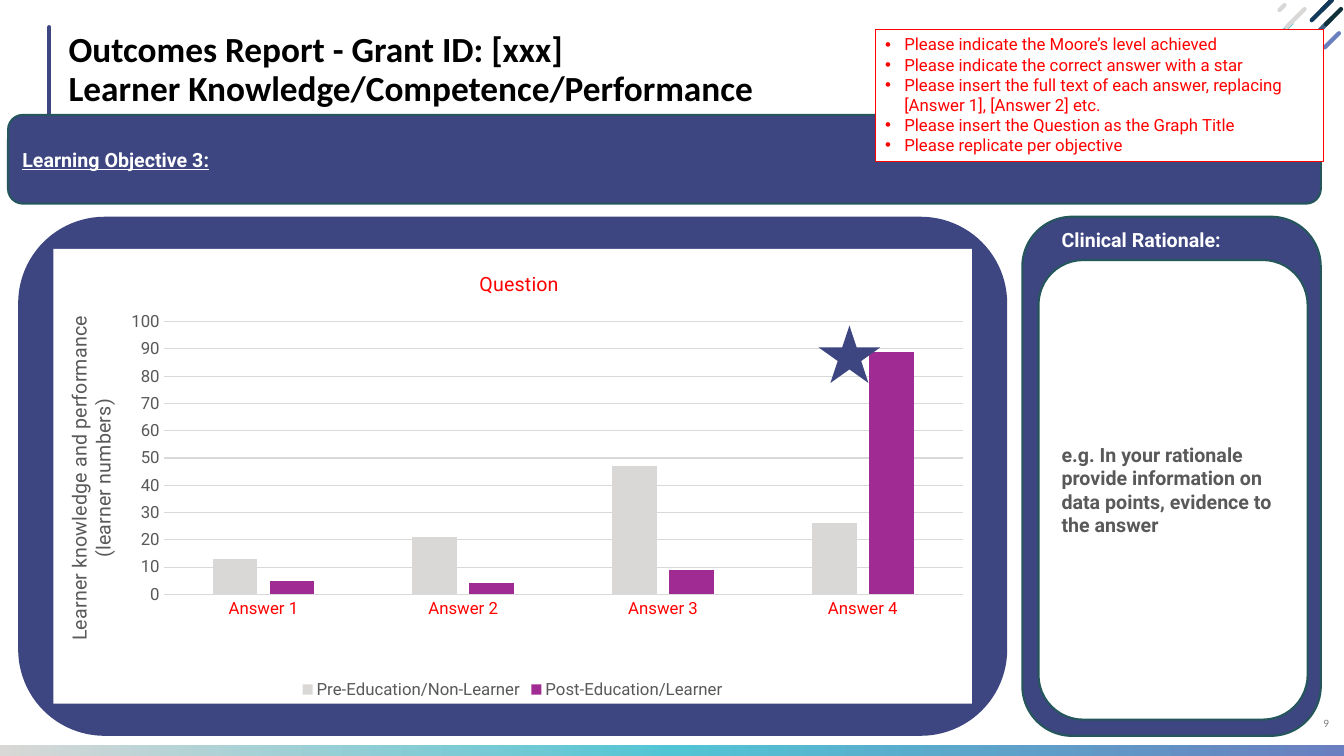
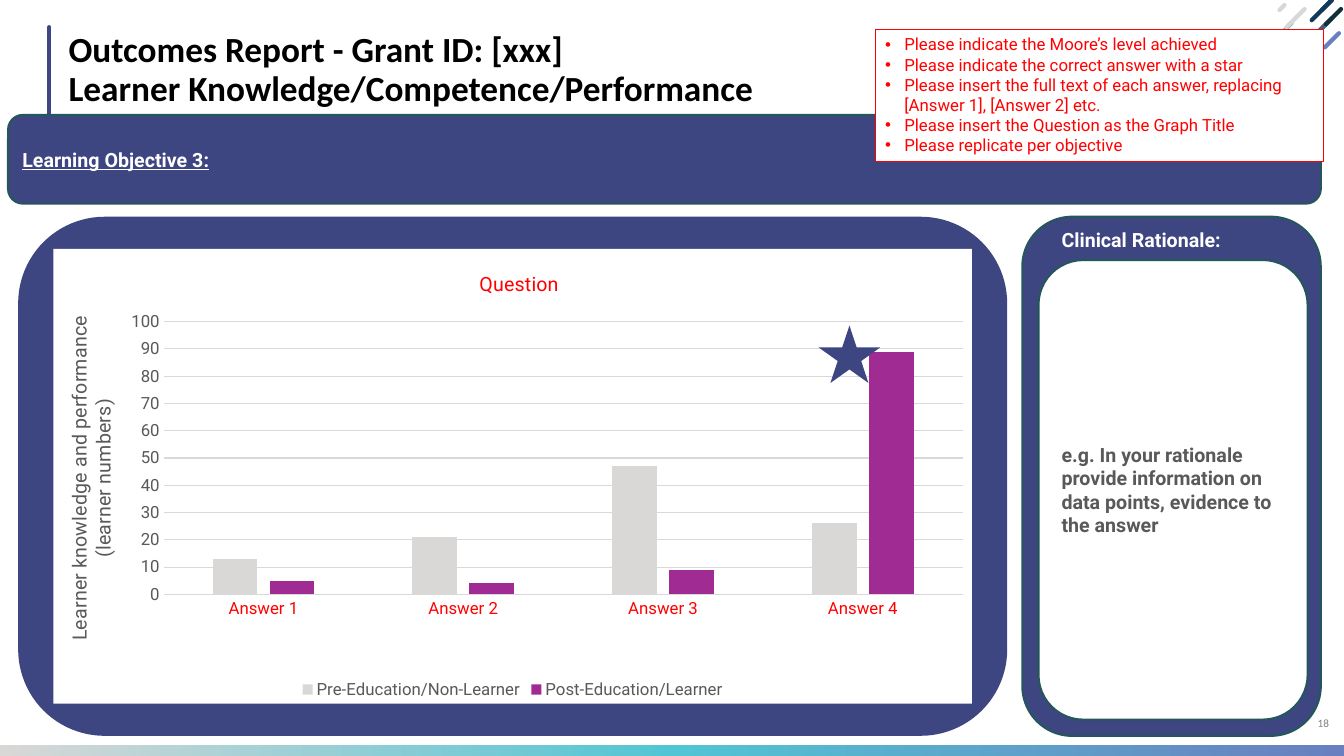
import copy

import lxml.etree
import pptx
import pptx.chart.data
import pptx.dml.color
import pptx.enum.chart
import pptx.enum.shapes
import pptx.enum.text
import pptx.oxml.ns
import pptx.util

Inches = pptx.util.Inches
Pt = pptx.util.Pt
RGBColor = pptx.dml.color.RGBColor
Shape = pptx.enum.shapes.MSO_SHAPE
Anchor = pptx.enum.text.MSO_ANCHOR
Align = pptx.enum.text.PP_ALIGN
qn = pptx.oxml.ns.qn

BLACK = RGBColor(0x00, 0x00, 0x00)
WHITE = RGBColor(0xFF, 0xFF, 0xFF)
RED = RGBColor(0xFF, 0x00, 0x00)
INDIGO = RGBColor(0x3E, 0x46, 0x82)
DARK_TEAL = RGBColor(0x24, 0x56, 0x5C)
PURPLE = RGBColor(0xA0, 0x2B, 0x93)
SILVER = RGBColor(0xD9, 0xD8, 0xD6)
GRID_GRAY = RGBColor(0xD9, 0xD9, 0xD9)
TEXT_GRAY = RGBColor(0x59, 0x59, 0x59)
NUMBER_GRAY = RGBColor(0x80, 0x80, 0x80)
TEAL = RGBColor(0x52, 0xC5, 0xD4)
PERIWINKLE = RGBColor(0x69, 0x7F, 0xBF)
NAVY = RGBColor(0x13, 0x39, 0x5B)
STEEL = RGBColor(0x3F, 0x5F, 0x7E)
INK = RGBColor(0x10, 0x31, 0x3A)

# Corner strokes rise at 45 degrees: left, bottom, extent, colour
CORNER_STROKES = [
    (13.01, 0.2, 0.2, NAVY),
    (13.11, 0.1, 0.1, NAVY),
    (13.14, 0.47, 0.14, PERIWINKLE),
    (12.94, 0.45, 0.21, PERIWINKLE),
    (13.03, 0.36, 0.18, STEEL),
    (13.15, 0.24, 0.15, INK),
    (12.6, 0.44, 0.21, TEAL),
    (12.76, 0.27, 0.18, SILVER),
    (12.69, 0.1, 0.05, SILVER),
]

TITLE = "Outcomes Report - Grant ID: [xxx]\nLearner Knowledge/Competence/Performance"
INSTRUCTIONS = [
    "Please indicate the Moore’s level achieved",
    "Please indicate the correct answer with a star",
    "Please insert the full text of each answer, replacing [Answer 1], [Answer 2] etc.",
    "Please insert the Question as the Graph Title",
    "Please replicate per objective",
]
RATIONALE = "e.g. In your rationale provide information on data points, evidence to the answer"
ANSWERS = ["Answer 1", "Answer 2", "Answer 3", "Answer 4"]
RESULTS = [
    ("Pre-Education/Non-Learner", (13, 21, 47, 26), SILVER),
    ("Post-Education/Learner", (5, 4, 9, 89), PURPLE),
]


def format_font(font, size, color, name="Roboto", bold=False, underline=None):
    font.size, font.name, font.bold = Pt(size), name, bold
    font.color.rgb = color
    if underline is not None:
        font.underline = underline


def write_text(frame, *texts, align=Align.LEFT, spacing=None, bullet=False, **font):
    """Put each text in its own paragraph, all with one format."""
    for index, text in enumerate(texts):
        paragraph = frame.add_paragraph() if index else frame.paragraphs[0]
        paragraph.text = text
        paragraph.alignment = align
        if spacing:
            paragraph.line_spacing = spacing
        for run in paragraph.runs:
            format_font(run.font, **font)
        if bullet:
            properties = paragraph._p.get_or_add_pPr()
            properties.set("marL", str(Inches(0.19)))
            properties.set("indent", str(-Inches(0.19)))
            lxml.etree.SubElement(properties, qn("a:buFont"), typeface="Arial")
            lxml.etree.SubElement(properties, qn("a:buChar"), char="•")


def place_in_chart(element, **fractions):
    """Give a chart part a manual layout, in fractions of the chart."""
    layout = element.find(qn("c:layout"))
    if layout is None:
        layout = lxml.etree.Element(qn("c:layout"))
        element.insert(0, layout)
    manual = lxml.etree.SubElement(layout, qn("c:manualLayout"))
    if "w" in fractions:
        lxml.etree.SubElement(manual, qn("c:layoutTarget"), val="inner")
    for key in ("x", "y"):
        lxml.etree.SubElement(manual, qn(f"c:{key}Mode"), val="edge")
    for key, value in fractions.items():
        lxml.etree.SubElement(manual, qn(f"c:{key}"), val=str(value))


class Deck:
    def __init__(self):
        self.presentation = pptx.Presentation()
        self.presentation.slide_width = Inches(13.33)
        self.presentation.slide_height = Inches(7.5)
        self.slide = None

    def add_slide(self, title, number):
        self.slide = self.presentation.slides.add_slide(self.presentation.slide_layouts[5])
        self.add_frame()
        self.add_text(10.76, 7.05, 2.52, 0.24, number, anchor=Anchor.BOTTOM,
                      align=Align.RIGHT, size=8, color=NUMBER_GRAY, name="Calibri")
        shape = self.slide.shapes.title
        shape.left, shape.top = Inches(0.58), Inches(0.27)
        shape.width, shape.height = Inches(11.71), Inches(0.86)
        frame = shape.text_frame
        frame.auto_size = pptx.enum.text.MSO_AUTO_SIZE.NONE
        frame.vertical_anchor = Anchor.MIDDLE
        write_text(frame, title, spacing=0.9, size=25.2, color=BLACK, name="Calibri", bold=True)

    def add_frame(self):
        """Draw the bottom band, title rule and corner strokes."""
        band = self.add_shape(Shape.RECTANGLE, 0, 7.39, 13.33, 0.11)
        band.fill.gradient()
        band.fill.gradient_angle = 0
        stop_list = band._element.spPr.find(".//" + qn("a:gsLst"))
        stop_list.append(copy.deepcopy(stop_list[0]))
        for stop, position, color in zip(band.fill.gradient_stops, (0, 0.5, 1),
                                         (SILVER, TEAL, PERIWINKLE)):
            stop.position = position
            stop.color.rgb = color
        self.add_line(0.49, 0.27, 0.49, 1.15, INDIGO)
        for left, bottom, extent, color in CORNER_STROKES:
            self.add_line(left, bottom, left + extent, bottom - extent, color)

    def add_line(self, x1, y1, x2, y2, color):
        line = self.slide.shapes.add_connector(
            pptx.enum.shapes.MSO_CONNECTOR.STRAIGHT,
            Inches(x1), Inches(y1), Inches(x2), Inches(y2))
        line.line.color.rgb = color
        line.line.width = Pt(3)
        properties = line._element.spPr
        properties.find(qn("a:ln")).set("cap", "rnd")
        lxml.etree.SubElement(properties, qn("a:effectLst"))

    def add_shape(self, kind, left, top, width, height, fill=None, outline=None, weight=1.5):
        shape = self.slide.shapes.add_shape(
            kind, Inches(left), Inches(top), Inches(width), Inches(height))
        shape.shadow.inherit = False
        if fill is not None:
            shape.fill.solid()
            shape.fill.fore_color.rgb = fill
        if outline is None:
            shape.line.fill.background()
        else:
            shape.line.color.rgb = outline
            shape.line.width = Pt(weight)
        return shape

    def add_panel(self, left, top, width, height, fill=INDIGO, outline=DARK_TEAL):
        return self.add_shape(Shape.ROUNDED_RECTANGLE, left, top, width, height, fill, outline)

    def add_text(self, left, top, width, height, text, anchor=Anchor.TOP, **style):
        box = self.slide.shapes.add_textbox(
            Inches(left), Inches(top), Inches(width), Inches(height))
        box.text_frame.word_wrap = True
        box.text_frame.vertical_anchor = anchor
        write_text(box.text_frame, text, **style)

    def add_callout(self, left, top, width, height, items):
        box = self.add_shape(Shape.RECTANGLE, left, top, width, height, WHITE, RED, 0.75)
        box.text_frame.vertical_anchor = Anchor.TOP
        write_text(box.text_frame, *items, bullet=True, size=12, color=RED)

    def add_results_chart(self, left, top, width, height):
        data = pptx.chart.data.CategoryChartData()
        data.categories = ANSWERS
        for name, values, _ in RESULTS:
            data.add_series(name, values)
        chart = self.slide.shapes.add_chart(
            pptx.enum.chart.XL_CHART_TYPE.COLUMN_CLUSTERED,
            Inches(left), Inches(top), Inches(width), Inches(height), data).chart
        format_font(chart.font, 10, BLACK)

        plot = chart.plots[0]
        plot.gap_width, plot.overlap = 219, -27
        plot.vary_by_categories = False
        for series, (_, _, color) in zip(plot.series, RESULTS):
            series.format.fill.solid()
            series.format.fill.fore_color.rgb = color

        categories, values = chart.category_axis, chart.value_axis
        for axis, color in ((categories, RED), (values, TEXT_GRAY)):
            axis.major_tick_mark = pptx.enum.chart.XL_TICK_MARK.NONE
            format_font(axis.tick_labels.font, 12, color)
        categories.format.line.color.rgb = GRID_GRAY
        categories.format.line.width = Pt(0.75)
        values.minimum_scale, values.maximum_scale, values.major_unit = 0, 100, 10
        values.format.line.fill.background()
        values.major_gridlines.format.line.color.rgb = GRID_GRAY
        values.major_gridlines.format.line.width = Pt(0.75)

        write_text(chart.chart_title.text_frame, "Question",
                   align=Align.CENTER, size=14, color=RED)
        axis_frame = values.axis_title.text_frame
        write_text(axis_frame, "Learner knowledge and performance", "(learner numbers)",
                   align=Align.CENTER, size=14, color=TEXT_GRAY)
        axis_frame._txBody.bodyPr.set("rot", "-5400000")
        axis_frame._txBody.bodyPr.set("vert", "horz")

        chart.has_legend = True
        chart.legend.position = pptx.enum.chart.XL_LEGEND_POSITION.BOTTOM
        chart.legend.include_in_layout = False
        format_font(chart.legend.font, 12, TEXT_GRAY)

        chart_element = chart._chartSpace.chart
        place_in_chart(chart_element.plotArea, x=0.12, y=0.16, w=0.87, h=0.6)
        place_in_chart(chart.chart_title._element, x=0.46, y=0.04)
        place_in_chart(values.axis_title._element, x=0.01, y=0.14)
        background = lxml.etree.Element(qn("c:spPr"))
        fill = lxml.etree.SubElement(background, qn("a:solidFill"))
        lxml.etree.SubElement(fill, qn("a:srgbClr"), val=str(WHITE))
        outline = lxml.etree.SubElement(background, qn("a:ln"))
        lxml.etree.SubElement(outline, qn("a:noFill"))
        chart_element.addnext(background)

    def add_outcomes_slide(self, number):
        self.add_slide(TITLE, number)
        self.add_panel(0.18, 2.15, 9.81, 5.15, outline=None)
        self.add_results_chart(0.53, 2.47, 9.11, 4.51)
        self.add_shape(Shape.STAR_5_POINT, 8.12, 3.23, 0.61, 0.57, INDIGO)

        objective = self.add_panel(0.08, 1.14, 13.02, 0.88)
        write_text(objective.text_frame, "Learning Objective 3:",
                   size=14, color=WHITE, bold=True, underline=True)
        self.add_callout(8.68, 0.29, 4.45, 1.31, INSTRUCTIONS)

        self.add_panel(10.14, 2.15, 2.96, 5.15)
        rationale = self.add_panel(10.3, 2.58, 2.67, 4.56, fill=WHITE)
        write_text(rationale.text_frame, RATIONALE, size=14, color=TEXT_GRAY, bold=True)
        self.add_text(10.43, 2.21, 1.92, 0.34, "Clinical Rationale:",
                      size=14, color=WHITE, bold=True)


def main():
    deck = Deck()
    for number in ("9", "18"):
        deck.add_outcomes_slide(number)
    deck.presentation.save("out.pptx")


if __name__ == "__main__":
    main()
